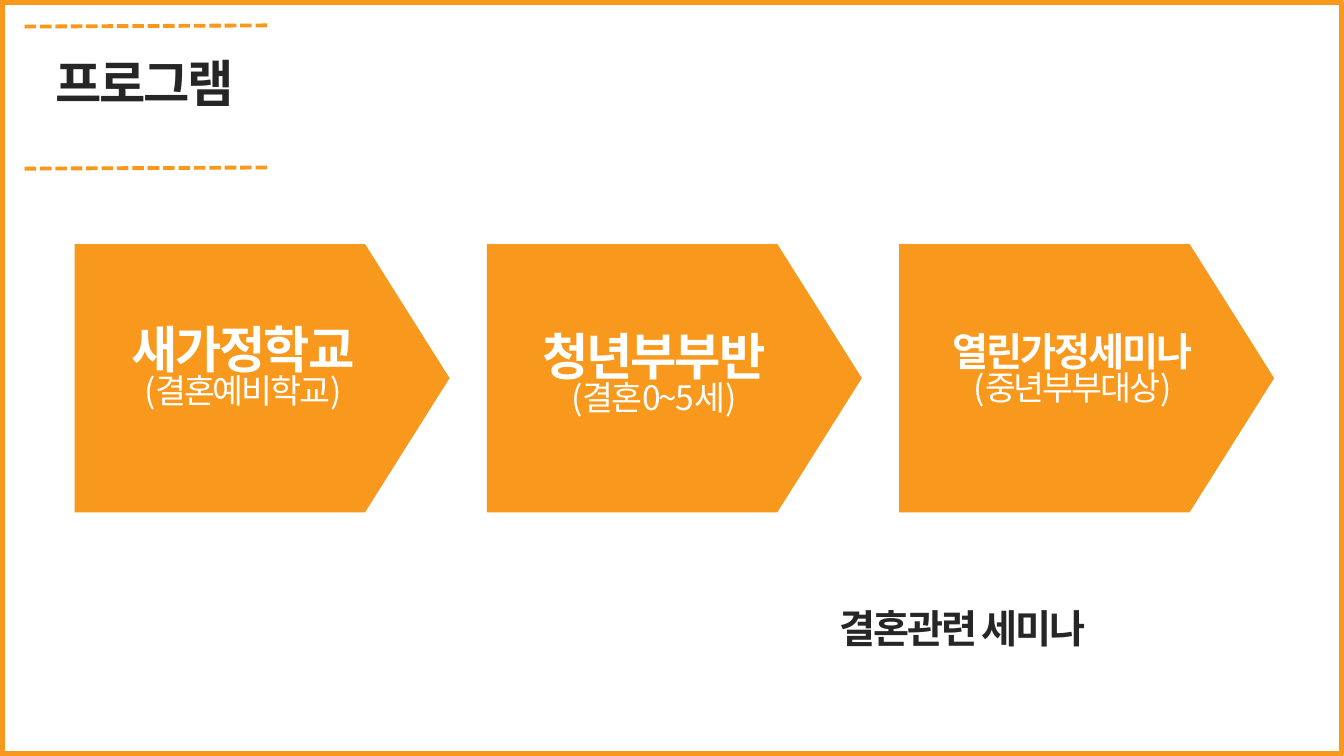
from lxml import etree
from pptx import Presentation
from pptx.dml.color import RGBColor
from pptx.enum.dml import MSO_LINE
from pptx.enum.shapes import MSO_CONNECTOR, MSO_SHAPE
from pptx.enum.text import MSO_ANCHOR, MSO_AUTO_SIZE, PP_ALIGN
from pptx.oxml.ns import qn
from pptx.util import Cm, Pt

RECTANGLE = MSO_SHAPE.RECTANGLE
PENTAGON = MSO_SHAPE.PENTAGON
STRAIGHT = MSO_CONNECTOR.STRAIGHT
DASHED = MSO_LINE.SQUARE_DOT
CENTER = PP_ALIGN.CENTER
TOP = MSO_ANCHOR.TOP
GROW = MSO_AUTO_SIZE.SHAPE_TO_FIT_TEXT

FONT = "Noto Sans CJK KR"
ORANGE = "F8981D"
DARK = "262626"
WHITE = "FFFFFF"
TITLE_ONLY = 5

ARROW_LEFT, ARROW_TOP, ARROW_STEP = 1.88, 6.15, 10.39
# label left, top, height, name, name size, note
PROGRAMS = [
    (2.59, 8.18, 2.82, "새가정학교", 36, "(결혼예비학교)"),
    (12.95, 8.36, 2.82, "청년부부반", 36, "(결혼0~5세)"),
    (23.5, 8.36, 2.49, "열린가정세미나", 28, "(중년부부대상)"),
]


def color(hex_value):
    return RGBColor.from_string(hex_value)


def add_frame(page):
    frame = page.shapes.add_shape(RECTANGLE, Cm(0.05), Cm(0.05), Cm(33.76), Cm(18.95))
    frame.shadow.inherit = False
    frame.fill.background()
    frame.line.color.rgb = color(ORANGE)
    frame.line.width = Pt(3.75)


def add_dashed_line(page, top):
    """Draw a rule that rises slightly to the right, ending at top."""
    rule = page.shapes.add_connector(STRAIGHT, Cm(6.73), Cm(top), Cm(0.58), Cm(top + 0.03))
    rule.line.color.rgb = color(ORANGE)
    rule.line.width = Pt(2.75)
    rule.line.dash_style = DASHED
    properties = rule._element.find(qn("p:spPr"))
    etree.SubElement(properties, qn("a:effectLst"))


def add_arrow(page, left):
    arrow = page.shapes.add_shape(PENTAGON, Cm(left), Cm(ARROW_TOP), Cm(9.45), Cm(6.76))
    arrow.adjustments[0] = 0.315
    arrow.shadow.inherit = False
    arrow.fill.solid()
    arrow.fill.fore_color.rgb = color(ORANGE)
    arrow.line.fill.background()


def write_lines(box, lines, hex_value):
    """Fill a box with centred lines given as (text, size, bold)."""
    frame = box.text_frame
    frame.text = "\n".join(text for text, _, _ in lines)
    frame.word_wrap = True
    frame.auto_size = GROW
    frame.vertical_anchor = TOP
    for para, (_, size, bold) in zip(frame.paragraphs, lines):
        para.alignment = CENTER
        para.line_spacing = 0.8
        para.space_before = Pt(0)
        span = para.runs[0]
        span.font.size = Pt(size)
        span.font.bold = bold
        span.font.name = FONT
        span.font.color.rgb = color(hex_value)
        properties = span.font._element
        properties.set("spc", "-150")
        latin = properties.find(qn("a:latin"))
        east_asian = etree.Element(qn("a:ea"), typeface=FONT)
        latin.addnext(east_asian)


def add_text(page, left, top, width, height, lines, hex_value):
    box = page.shapes.add_textbox(Cm(left), Cm(top), Cm(width), Cm(height))
    write_lines(box, lines, hex_value)


def set_title(page, text):
    title = page.shapes.title
    title.left, title.top = Cm(0.38), Cm(1.47)
    title.width, title.height = Cm(6.53), Cm(1.8)
    write_lines(title, [(text, 36, True)], DARK)


def main():
    deck = Presentation()
    deck.slide_width, deck.slide_height = Cm(33.87), Cm(19.05)
    page = deck.slides.add_slide(deck.slide_layouts[TITLE_ONLY])

    add_frame(page)
    for top in (4.22, 0.64):
        add_dashed_line(page, top)
    set_title(page, "프로그램")
    for index, (left, top, height, name, size, note) in enumerate(PROGRAMS):
        add_arrow(page, ARROW_LEFT + index * ARROW_STEP)
        lines = [(name, size, True), (note, 24, False)]
        add_text(page, left, top, 7.06, height, lines, WHITE)
    add_text(page, 15.29, 15.32, 17.93, 1.45, [("결혼관련 세미나", 28, True)], DARK)

    deck.save("out.pptx")


if __name__ == "__main__":
    main()
